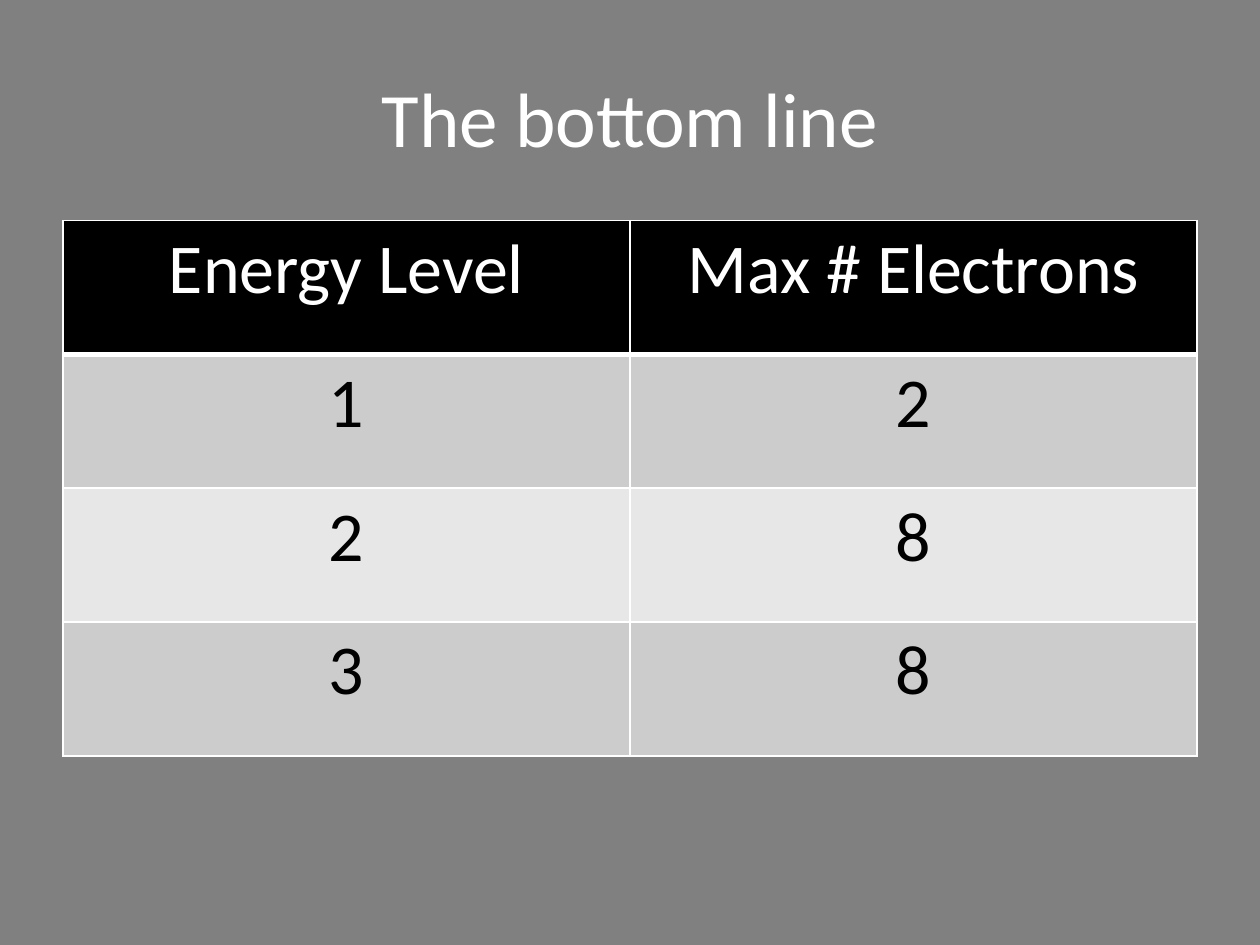
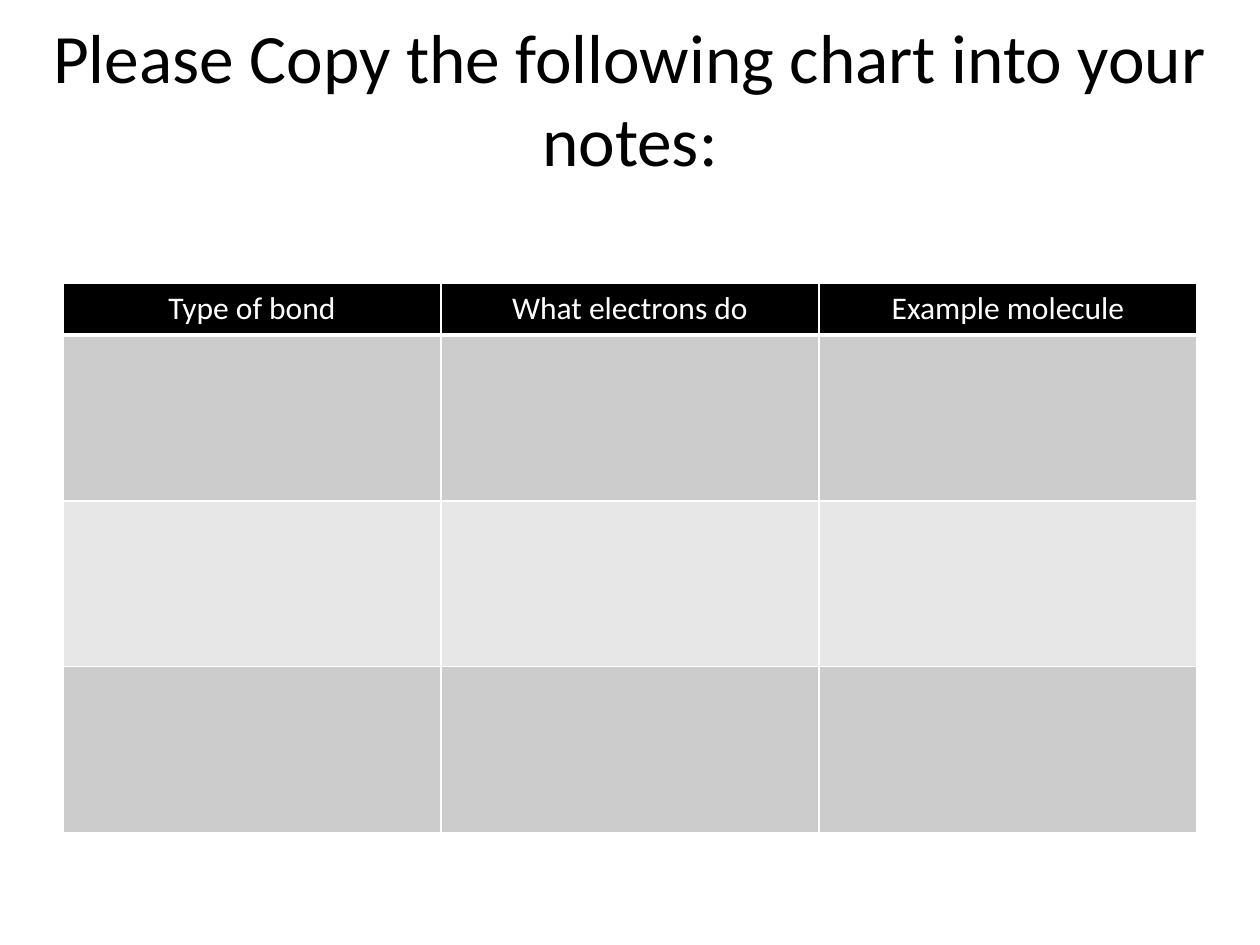
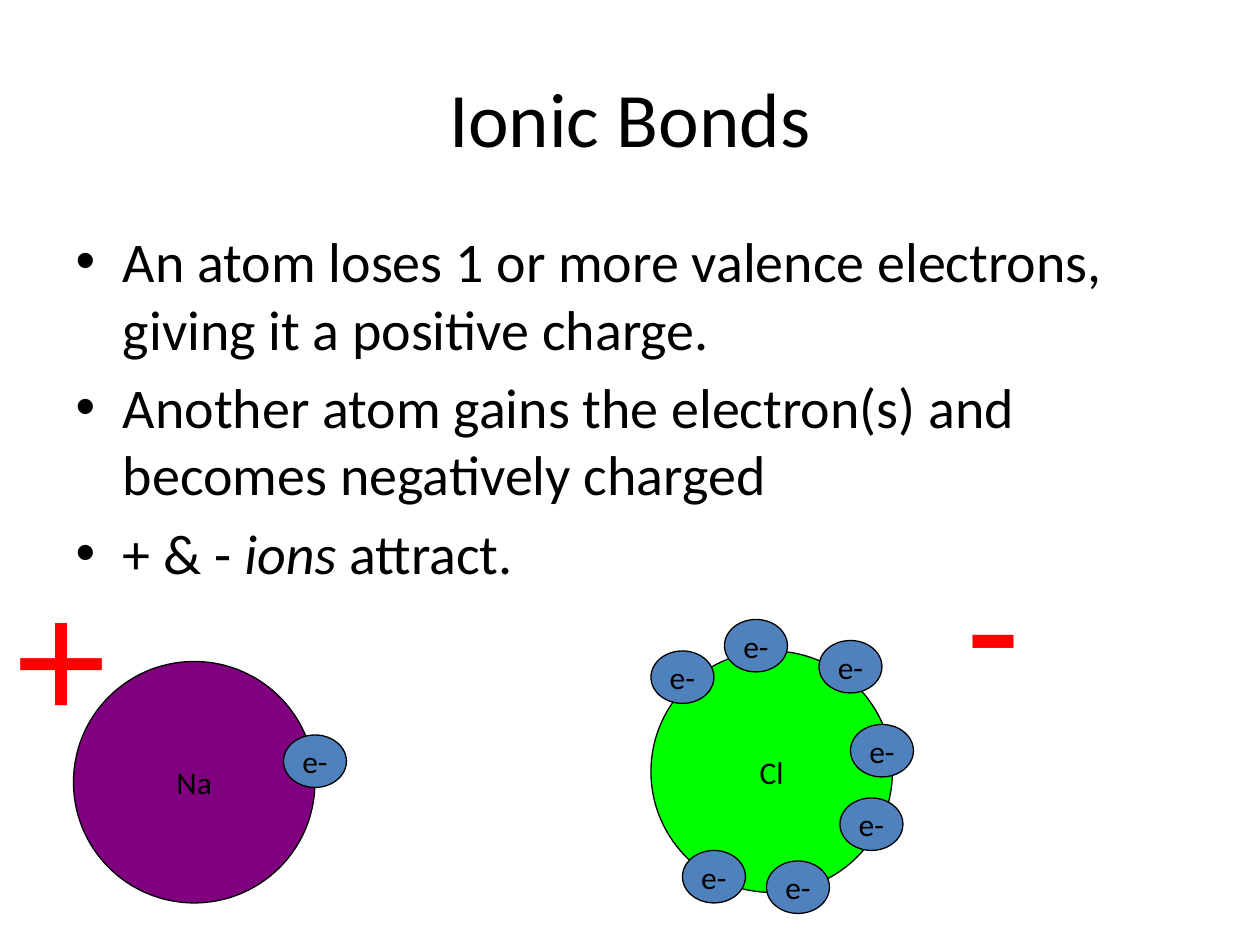
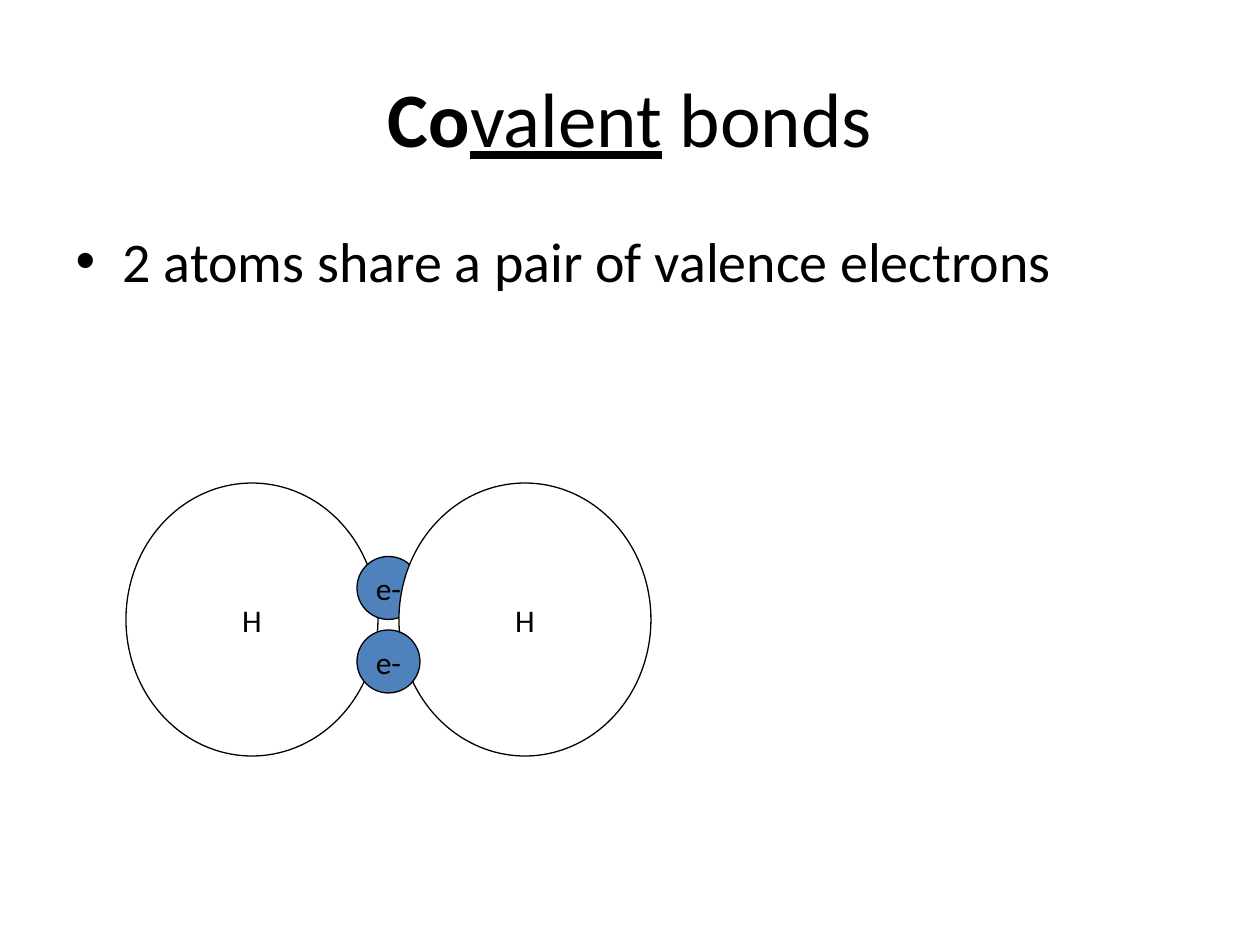
from lxml import etree
from pptx import Presentation, util as u
from pptx.dml.color import RGBColor
from pptx.enum import shapes, text
from pptx.oxml import ns

# Shared look
BLACK = RGBColor(0x00, 0x00, 0x00)
WHITE = RGBColor(0xFF, 0xFF, 0xFF)
GREY = RGBColor(0x80, 0x80, 0x80)
DARK = RGBColor(0xCC, 0xCC, 0xCC)
LIGHT = RGBColor(0xE7, 0xE7, 0xE7)
RED = RGBColor(0xFF, 0x00, 0x00)
PURPLE = RGBColor(0x80, 0x00, 0x80)
GREEN = RGBColor(0x00, 0xFF, 0x00)
BLUE = RGBColor(0x4F, 0x81, 0xBD)
FONT = "Calibri"
MID = text.PP_ALIGN.CENTER

# The slide is a grid of 120 columns by 90 rows, 12 to the inch
COLS, ROWS = 120, 90
HEAD = (6, 3.6, 108, 15)
BODY = (6, 21, 108, 59.4)
DOT = (6, 5)


def cells(*counts):
    return [u.Inches(n / 12) for n in counts]


def write(frame, paras, size=18, color=BLACK, font=FONT, align=None):
    """Fill a frame; a paragraph is a string or a list of (text, style) runs."""
    for i, runs in enumerate(paras):
        para = frame.paragraphs[0] if i == 0 else frame.add_paragraph()
        para.alignment = align
        for words, style in [(runs, "")] if isinstance(runs, str) else runs:
            run = para.add_run()
            run.text = words
            face = run.font
            face.size, face.name = u.Pt(size), font
            face.color.rgb = color
            face.bold = "b" in style
            face.italic = "i" in style
            face.underline = "u" in style


def place(holder, box):
    holder.left, holder.top, holder.width, holder.height = cells(*box)
    holder.text_frame.auto_size = text.MSO_AUTO_SIZE.NONE
    return holder.text_frame


def start(deck, title, points=(), box=HEAD, size=44, ink=BLACK, back=WHITE):
    """Add a slide with its background, title and optional bullet list."""
    slide = deck.slides.add_slide(deck.slide_layouts[1 if points else 5])
    slide.background.fill.solid()
    slide.background.fill.fore_color.rgb = back
    frame = place(slide.shapes.title, box)
    frame.vertical_anchor = text.MSO_ANCHOR.MIDDLE
    write(frame, [title], size=size, color=ink, align=MID)
    if points:
        write(place(slide.placeholders[1], BODY), points, size=32)
    return slide


def edge(cell, base):
    """Draw white borders, with the bottom one base points wide."""
    props = cell._tc.get_or_add_tcPr()
    for i, (side, width) in enumerate(zip("LRTB", (1, 1, 1, base))):
        line = etree.Element(ns.qn(f"a:ln{side}"), w=str(u.Pt(width)))
        fill = etree.SubElement(line, ns.qn("a:solidFill"))
        etree.SubElement(fill, ns.qn("a:srgbClr"), val=str(WHITE))
        props.insert(i, line)


def grid(slide, box, rows, highs, size):
    """Add a banded table with a black header row."""
    table = slide.shapes.add_table(len(rows), len(rows[0]), *cells(*box)).table
    for r, (row, high) in enumerate(zip(rows, highs)):
        table.rows[r].height = cells(high)[0]
        band = BLACK if r == 0 else DARK if r % 2 else LIGHT
        for c, words in enumerate(row):
            cell = table.cell(r, c)
            cell.fill.solid()
            cell.fill.fore_color.rgb = band
            edge(cell, 1 if r else 3)
            if words:
                write(cell.text_frame, [words], size=size, align=MID,
                      color=BLACK if r else WHITE)


def ball(slide, box, label, fill):
    """Add an outlined ellipse with a centred label."""
    shape = slide.shapes.add_shape(shapes.MSO_SHAPE.OVAL, *cells(*box))
    shape.shadow.inherit = False
    shape.fill.solid()
    shape.fill.fore_color.rgb = fill
    shape.line.color.rgb = BLACK
    shape.line.width = u.Pt(0.75)
    frame = shape.text_frame
    frame.word_wrap = False
    frame.vertical_anchor = text.MSO_ANCHOR.MIDDLE
    write(frame, [label], align=MID)


def atom(slide, box, label, fill, dots):
    """Add an atom and its electrons, offset from the corner of its box."""
    ball(slide, box, label, fill)
    for x, y in dots:
        ball(slide, (box[0] + x, box[1] + y, *DOT), "e-", BLUE)


def charge(slide, box, sign):
    frame = slide.shapes.add_textbox(*cells(*box)).text_frame
    frame.word_wrap = False
    frame.auto_size = text.MSO_AUTO_SIZE.SHAPE_TO_FIT_TEXT
    write(frame, [sign], size=96, color=RED, font="Arial")


def levels(deck):
    slide = start(deck, "The bottom line", ink=WHITE, back=GREY)
    rows = [("Energy Level", "Max # Electrons"),
            ("1", "2"), ("2", "8"), ("3", "8")]
    grid(slide, (6, 21, 108, 51), rows, [51 / 4] * 4, 40)


def notes(deck):
    slide = start(deck, "Please Copy the following chart into your notes:",
                  box=(0, 0, COLS, 18.6), size=39.6)
    rows = [("Type of bond", "What electrons do", "Example molecule")]
    rows += [("",) * 3] * 3
    grid(slide, (6, 27, 108, 52.3), rows, [4.9] + [15.8] * 3, 18)


def ionic(deck):
    slide = start(deck, "Ionic Bonds", [
        "An atom loses 1 or more valence electrons, "
        "giving it a positive charge.",
        "Another atom gains the electron(s) and becomes negatively charged",
        [("+ & - ", ""), ("ions", "i"), (" attract.", "")]])
    # Chlorine with seven electrons, then sodium with one
    atom(slide, (62, 62, 23, 23), "Cl", GREEN,
         [(0, 0), (7, -3), (16, -1), (19, 7), (18, 14), (11, 20), (3, 19)])
    atom(slide, (7, 63, 23, 23), "Na", PURPLE, [(20, 7)])
    charge(slide, (90.8, 48.8, 7.8, 20.4), "-")
    charge(slide, (0, 52, 11.8, 20.4), "+")


def shared(deck):
    slide = start(deck, [("Co", "b"), ("valent", "u"), (" bonds", "")],
                  ["2 atoms share a pair of valence electrons"])
    # Each hydrogen atom is followed by one electron of the pair
    for left, top in ((12, 53), (38, 60)):
        ball(slide, (left, 46, 24, 26), "H", WHITE)
        ball(slide, (34, top, 6, 6), "e-", BLUE)


def main():
    deck = Presentation()
    deck.slide_width, deck.slide_height = cells(COLS, ROWS)
    for build in (levels, notes, ionic, shared):
        build(deck)
    deck.save("out.pptx")


if __name__ == "__main__":
    main()
